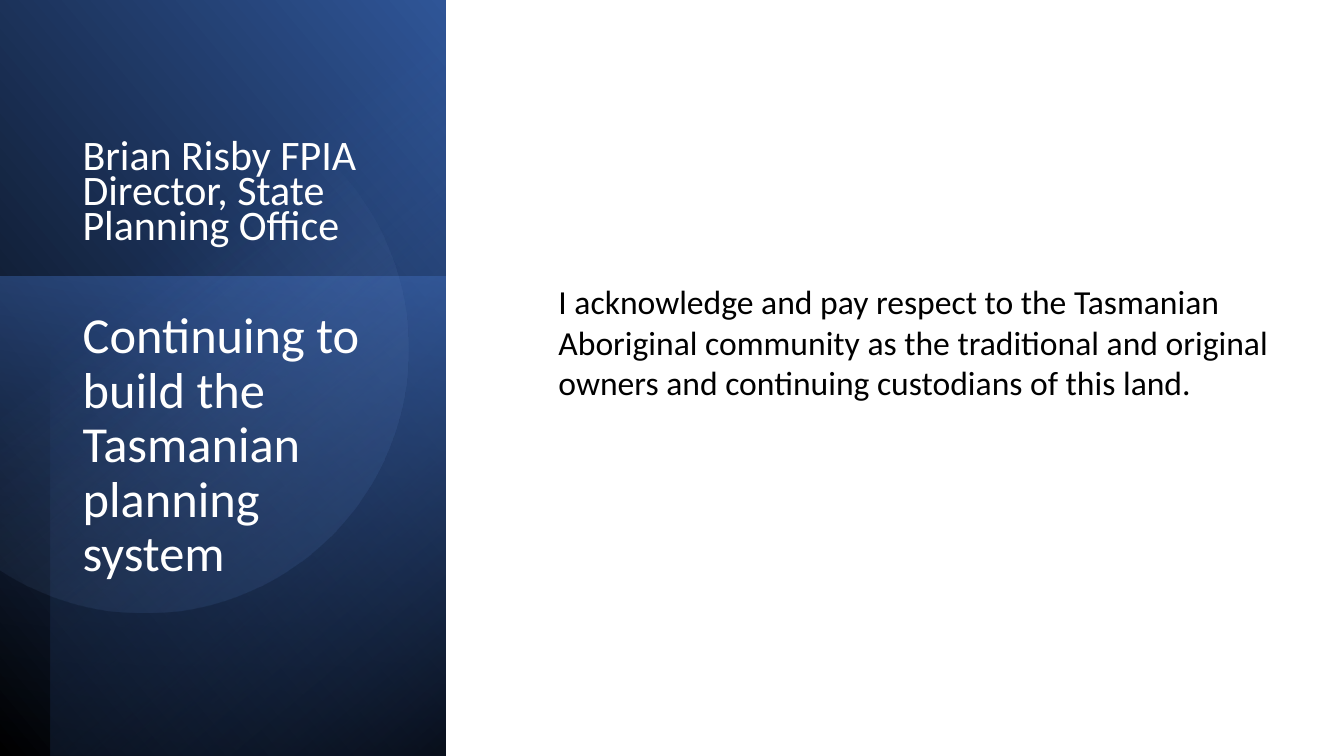
from math import acos, cos, pi, sin

from pptx import Presentation
from pptx import util as u
from pptx.dml import color
from pptx.enum import shapes, text
from pptx.oxml import parse_xml
from pptx.oxml.ns import nsdecls

WHITE = "FFFFFF"
BLACK = "000000"


def rgb(code):
    """Turn a hex string into a colour."""
    return color.RGBColor.from_string(code)


def shade(shape, stops, angle):
    """Fill with a linear gradient of (place, colour, opacity) stops."""
    marks = "".join(
        f'<a:gs pos="{place * 1000}"><a:srgbClr val="{code}">'
        f'<a:alpha val="{alpha * 1000}"/></a:srgbClr></a:gs>'
        for place, code, alpha in stops
    )
    grad = parse_xml(
        f'<a:gradFill {nsdecls("a")} rotWithShape="1"><a:gsLst>{marks}</a:gsLst>'
        f'<a:lin ang="{angle * 60000}" scaled="0"/></a:gradFill>'
    )
    shape.shadow.inherit = False
    shape.line.fill.background()
    shape.fill.background()
    props = shape._element.spPr
    props.replace(props.find("{*}noFill"), grad)


def panel(slide, box, turn, flip, stops, angle):
    """Add a turned gradient rectangle."""
    rect = slide.shapes.add_shape(
        shapes.MSO_SHAPE.RECTANGLE, *map(u.Inches, box))
    rect.rotation = turn
    if flip:
        rect._element.spPr.xfrm.set("flipH", "1")
    shade(rect, stops, angle)


def disc(slide, mid, high, rad, stops, angle):
    """Add a circle cut off at the slide's left edge."""
    half = acos(-mid / rad)
    count = 120
    turns = [half * (2 * i / count - 1) for i in range(count + 1)]
    points = [(u.Inches(mid + rad * cos(t)), u.Inches(high + rad * sin(t)))
              for t in turns]
    pen = slide.shapes.build_freeform(*points[0])
    pen.add_line_segments(points[1:], close=True)
    shade(pen.convert_to_shape(), stops, angle)


def write(shape, box, lines, size, code, space=None, anchor="TOP"):
    """Place a text shape and fill it with lines of one paragraph."""
    shape.left, shape.top, shape.width, shape.height = map(u.Inches, box)
    frame = shape.text_frame
    frame.word_wrap = True
    frame.auto_size = text.MSO_AUTO_SIZE.NONE
    frame.vertical_anchor = text.MSO_ANCHOR[anchor]
    para = frame.paragraphs[0]
    para.alignment = text.PP_ALIGN.LEFT
    para.line_spacing = space
    for i, line in enumerate(lines):
        if i:
            para.add_line_break()
        run = para.add_run()
        run.text = line
        run.font.name = "Calibri"
        run.font.size = u.Pt(size)
        run.font.color.rgb = rgb(code)


def label(slide, box, *style, **more):
    """Add a text box."""
    write(slide.shapes.add_textbox(*map(u.Inches, box)), box, *style, **more)


def main():
    """Build the slide."""
    deck = Presentation()
    deck.slide_width, deck.slide_height = u.Inches(13.33), u.Inches(7.5)
    slide = deck.slides.add_slide(deck.slide_layouts[5])

    panel(slide, (-1.55, 1.55, 7.52, 4.42), 90, True,
          [(0, BLACK, 100), (100, "2F5597", 100)], 310)
    panel(slide, (-0.17, 2.91, 4.76, 4.42), 270, False,
          [(0, "4472C4", 50), (100, "203864", 0)], 190)
    panel(slide, (-1.29, 1.79, 7.5, 3.92), 270, True,
          [(0, BLACK, 59), (69, "4472C4", 0)], 220)
    disc(slide, 1.43, 3.46, 2.62,
         [(39, "8FAADC", 0), (100, "2F5597", 26)], 52)

    title = slide.shapes.title
    slide.shapes._spTree.append(title._element)
    write(title, (0.72, 3.03, 3.15, 3.36),
          ["Continuing to build the Tasmanian planning system"],
          36, WHITE, 0.9)
    label(slide, (0.72, 0.88, 3.19, 1.63),
          ["Brian Risby FPIA", "Director, State Planning Office"],
          30, WHITE, 0.7, anchor="BOTTOM")
    label(slide, (5.44, 2.74, 7.39, 1.31),
          ["I acknowledge and pay respect to the Tasmanian Aboriginal "
           "community as the traditional and original owners and "
           "continuing custodians of this land."], 24, BLACK)
    deck.save("out.pptx")


if __name__ == "__main__":
    main()
